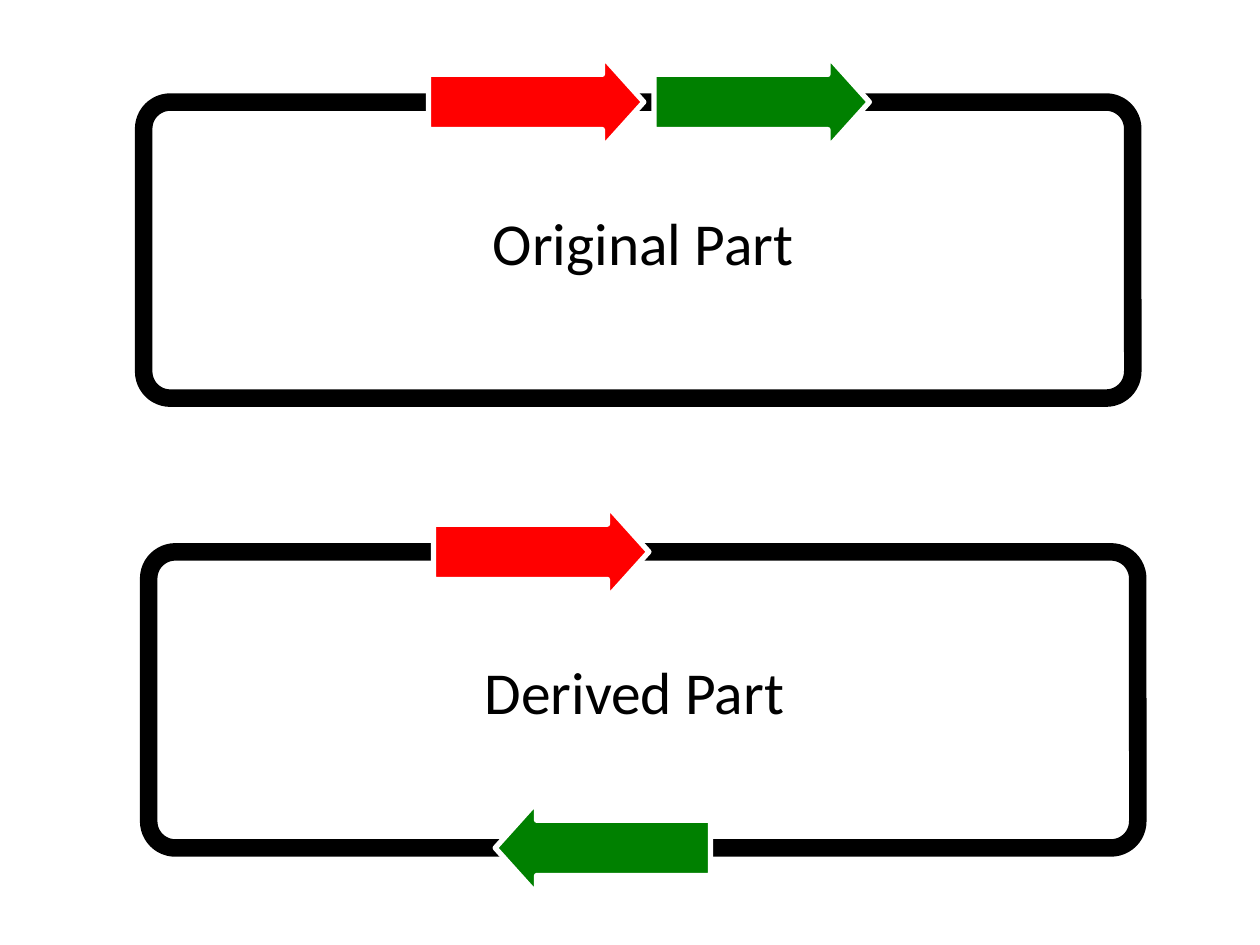
from pptx import Presentation
from pptx.dml.color import RGBColor
from pptx.enum.shapes import MSO_SHAPE
from pptx.enum.text import MSO_ANCHOR, PP_ALIGN
from pptx.util import Inches, Pt

BLACK = RGBColor(0x00, 0x00, 0x00)
WHITE = RGBColor(0xFF, 0xFF, 0xFF)
RED = RGBColor(0xFF, 0x00, 0x00)
GREEN = RGBColor(0x00, 0x80, 0x00)

SLIDE_WIDTH, SLIDE_HEIGHT = Inches(10), Inches(7.5)
COLUMNS, ROWS = 1000, 750
PLASMID_COLUMNS, PLASMID_ROWS = 785, 235
GENE_COLUMNS, GENE_ROWS = 171, 73
LABEL_COLUMNS, LABEL_ROWS = 327, 57
LABEL_DROP = 82


def grid_box(column, row, columns, rows):
    cell_width, cell_height = SLIDE_WIDTH / COLUMNS, SLIDE_HEIGHT / ROWS
    return (
        round(column * cell_width),
        round(row * cell_height),
        round(columns * cell_width),
        round(rows * cell_height),
    )


def add_outlined(shapes, preset, box, adjustments, line_color, line_width):
    outlined = shapes.add_shape(preset, *box)
    outlined.shadow.inherit = False
    for index, value in enumerate(adjustments):
        outlined.adjustments[index] = value
    outlined.line.color.rgb = line_color
    outlined.line.width = Pt(line_width)
    return outlined


def add_backbone(shapes, column, row):
    box = grid_box(column, row, PLASMID_COLUMNS, PLASMID_ROWS)
    backbone = add_outlined(
        shapes, MSO_SHAPE.ROUNDED_RECTANGLE, box, [0.09], BLACK, 10
    )
    backbone.fill.background()


def add_gene(shapes, column, strand_row, color, preset=MSO_SHAPE.RIGHT_ARROW):
    box = grid_box(column, strand_row - GENE_ROWS / 2, GENE_COLUMNS, GENE_ROWS)
    gene = add_outlined(shapes, preset, box, [0.6, 0.45], WHITE, 3)
    gene.fill.solid()
    gene.fill.fore_color.rgb = color


def add_label(shapes, text, box, *, size=34, font="Calibri", color=BLACK,
              align=PP_ALIGN.CENTER, anchor=MSO_ANCHOR.MIDDLE):
    frame = shapes.add_textbox(*box).text_frame
    frame.word_wrap = True
    frame.vertical_anchor = anchor
    frame.margin_left = frame.margin_right = 0
    frame.margin_top = frame.margin_bottom = 0
    paragraph = frame.paragraphs[0]
    paragraph.alignment = align
    run = paragraph.add_run()
    run.text = text
    run.font.size = Pt(size)
    run.font.name = font
    run.font.color.rgb = color


def add_part_label(shapes, text, column, plasmid_row):
    box = grid_box(column, plasmid_row + LABEL_DROP, LABEL_COLUMNS, LABEL_ROWS)
    add_label(shapes, text, box)


def add_original_part(shapes, column, row):
    add_backbone(shapes, column, row)
    add_part_label(shapes, "Original Part", column + 233, row)
    add_gene(shapes, column + 405, row, GREEN)
    add_gene(shapes, column + 226, row, RED)


def add_derived_part(shapes, column, row):
    add_backbone(shapes, column, row)
    add_gene(shapes, column + 275, row + PLASMID_ROWS, GREEN, MSO_SHAPE.LEFT_ARROW)
    add_gene(shapes, column + 226, row, RED)
    add_part_label(shapes, "Derived Part", column + 222, row)


def main():
    presentation = Presentation()
    presentation.slide_width = SLIDE_WIDTH
    presentation.slide_height = SLIDE_HEIGHT
    slide = presentation.slides.add_slide(presentation.slide_layouts[6])
    add_original_part(slide.shapes, 114, 81)
    derived_part = slide.shapes.add_group_shape()
    add_derived_part(derived_part.shapes, 118, 438)
    presentation.save("out.pptx")


if __name__ == "__main__":
    main()
